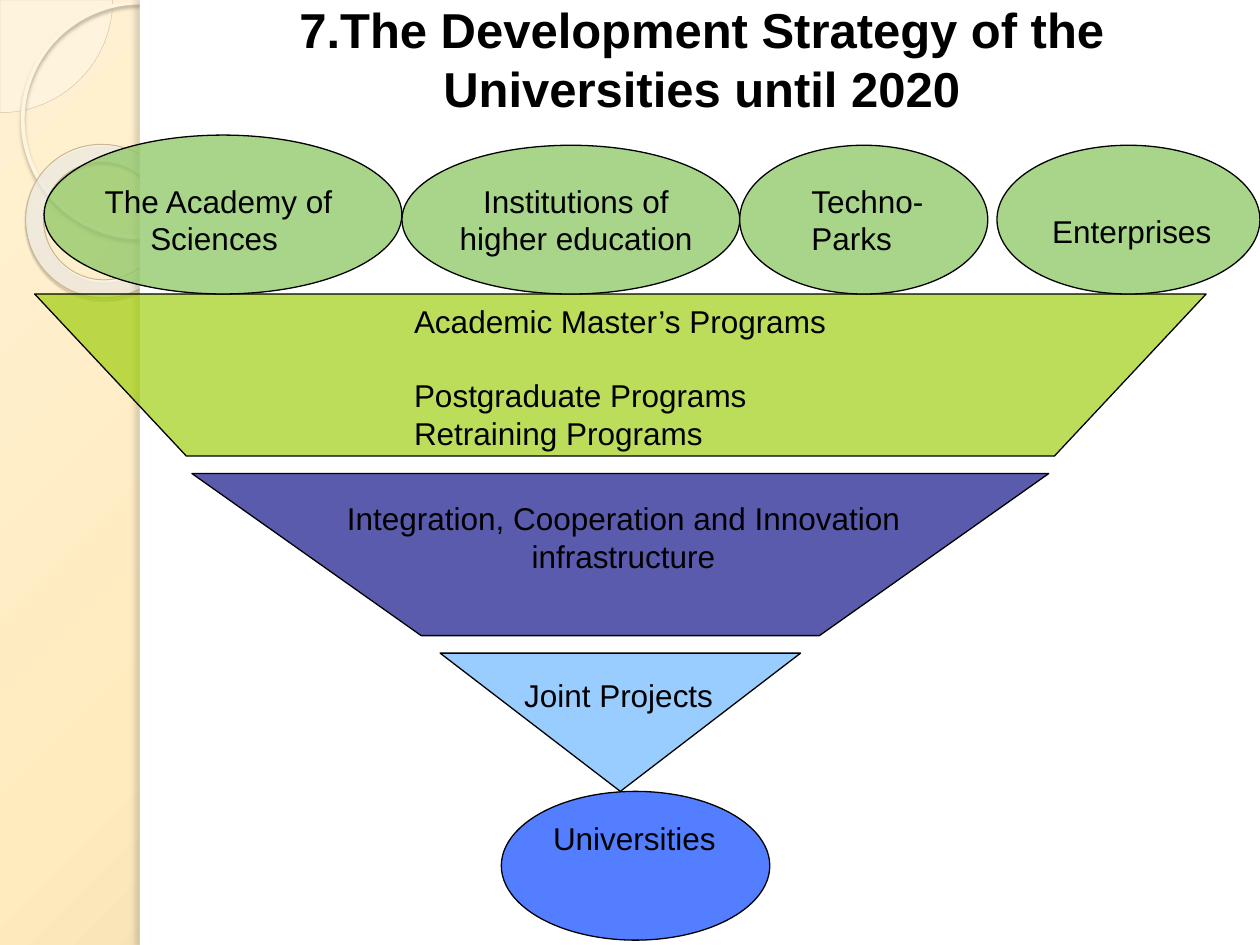
from pptx import Presentation
from pptx.dml.color import RGBColor
from pptx.enum.shapes import MSO_SHAPE as SHAPE
from pptx.enum.text import MSO_ANCHOR as ANCHOR, PP_ALIGN as ALIGN
from pptx.oxml import parse_xml
from pptx.oxml.ns import qn
from pptx.util import Pt

BLACK = RGBColor(0x00, 0x00, 0x00)
WHITE = RGBColor(0xFF, 0xFF, 0xFF)
GREEN = RGBColor(0x8D, 0xC7, 0x65)
LIME = RGBColor(0x99, 0xCC, 0x00)
INDIGO = RGBColor(0x33, 0x33, 0x99)
SKY = RGBColor(0x99, 0xCC, 0xFF)
BLUE = RGBColor(0x33, 0x66, 0xFF)
CREAM = RGBColor(0xFE, 0xFA, 0xF4)
PIE_EDGE = RGBColor(0xD3, 0xC3, 0x9F)
RING_EDGE = RGBColor(0xFF, 0xF5, 0xDE)
RING_SHADE = RGBColor(0xB0, 0xA6, 0x8F)
DONUT_EDGE = RGBColor(0xC7, 0xB8, 0x93)
DONUT_SHADE = RGBColor(0x5A, 0x54, 0x44)
PANEL_SHADE = RGBColor(0x73, 0x6F, 0x63)
PAPER = [(0, RGBColor(0xFF, 0xF1, 0xD3), 100), (40, RGBColor(0xFF, 0xEB, 0xBE), 100),
         (100, RGBColor(0xC9, 0xB4, 0x84), 100)]
PEARL = [(0, RGBColor(0xFF, 0xFC, 0xF6), 70), (70, RGBColor(0xFF, 0xFE, 0xFB), 55),
         (100, RGBColor(0xF0, 0xD2, 0x8E), 60)]
NS = 'xmlns:a="http://schemas.openxmlformats.org/drawingml/2006/main"'


def color_xml(color, alpha):
    """Return the XML of a colour with its opacity in percent."""
    return f'<a:srgbClr val="{color}"><a:alpha val="{alpha * 1000}"/></a:srgbClr>'


def set_gradient(fill, owner, stops, rect):
    """Give a fill a circular gradient that runs to the given rectangle."""
    fill.gradient()
    old = next(owner.iter(qn("a:gradFill")))
    gs = "".join(f'<a:gs pos="{pos * 1000}">{color_xml(c, a)}</a:gs>' for pos, c, a in stops)
    l, t, r, b = (v * 1000 for v in rect)
    old.getparent().replace(old, parse_xml(
        f'<a:gradFill {NS} rotWithShape="1"><a:gsLst>{gs}</a:gsLst><a:path path="circle">'
        f'<a:fillToRect l="{l}" t="{t}" r="{r}" b="{b}"/></a:path></a:gradFill>'))


def set_shadow(sp, color, alpha, blur, dist, angle):
    """Give a shape an outer shadow."""
    effects = sp._element.spPr.find(qn("a:effectLst"))
    effects.append(parse_xml(
        f'<a:outerShdw {NS} blurRad="{Pt(blur)}" dist="{Pt(dist)}" dir="{angle * 60000}" '
        f'algn="tl" rotWithShape="0">{color_xml(color, alpha)}</a:outerShdw>'))


def style(sp, fill=None, alpha=100, line=None, width=0.75):
    """Set the fill, opacity and outline of a shape and return it."""
    sp.shadow.inherit = False
    if fill is None:
        sp.fill.background()
    else:
        sp.fill.solid()
        sp.fill.fore_color.rgb = fill
        clr = sp._element.spPr.find(qn("a:solidFill"))[0]
        clr.append(parse_xml(f'<a:alpha {NS} val="{alpha * 1000}"/>'))
    if line is None:
        sp.line.fill.background()
    else:
        sp.line.color.rgb = line
        sp.line.width = Pt(width)
    return sp


def add_preset(slide, kind, x, y, w, h, **look):
    """Add a styled preset shape."""
    return style(slide.shapes.add_shape(kind, Pt(x), Pt(y), Pt(w), Pt(h)), **look)


def write(tf, lines, align=ALIGN.CENTER, size=18, bold=False, anchor=ANCHOR.TOP, wrap=True):
    """Fill a text frame with one paragraph for each line."""
    tf.word_wrap = wrap
    tf.vertical_anchor = anchor
    for i, text in enumerate(lines):
        p = tf.add_paragraph() if i else tf.paragraphs[0]
        p.alignment = align
        r = p.add_run()
        r.text = text
        r.font.name, r.font.size, r.font.bold = "Arial", Pt(size), bold
        r.font.color.rgb = BLACK


def add_label(slide, lines, x, y, w, h, **text):
    """Add a text box and return its text frame."""
    tf = slide.shapes.add_textbox(Pt(x), Pt(y), Pt(w), Pt(h)).text_frame
    write(tf, lines, **text)
    return tf


def add_backdrop(slide, x, y, w, h):
    """Draw the paper background, its ornaments and the white panel."""
    set_gradient(slide.background.fill, slide._element, PAPER, (-24, -20, 124, 120))
    pie = add_preset(slide, SHAPE.PIE, x - 64.4, y - 64.4, 128.8, 128.8,
                     fill=CREAM, alpha=33, line=PIE_EDGE, width=0.25)
    pie.adjustments[0], pie.adjustments[1] = 0, 54
    ring = add_preset(slide, SHAPE.OVAL, x + 13, y + 1.5, 134, 134, line=RING_EDGE, width=2.15)
    set_shadow(ring, RING_SHADE, 85, 2, 2, 90)
    donut = add_preset(slide, SHAPE.DONUT, x + 14.4, y + 82.8, 88.6, 87.1,
                       line=DONUT_EDGE, width=0.58)
    donut.adjustments[0] = 0.118
    donut.rotation = 38.6
    set_gradient(donut.fill, donut._element, PEARL, (-408, -50, 508, 150))
    set_shadow(donut, DONUT_SHADE, 35, 1, 1.2, 75)
    add_preset(slide, SHAPE.RECTANGLE, x + 80, y, w - 80, h, fill=WHITE)
    edge = add_preset(slide, SHAPE.RECTANGLE, x + 80, y, 5.8, h, fill=WHITE)
    set_shadow(edge, PANEL_SHADE, 25, 3, 3, 180)


def add_title(slide, x, y, w, h):
    """Place and format the title placeholder."""
    sp = slide.shapes.title
    sp.left, sp.top, sp.width, sp.height = Pt(x), Pt(y), Pt(w), Pt(h)
    write(sp.text_frame, ["7.The Development Strategy of the Universities until 2020"],
          size=28, bold=True, anchor=ANCHOR.MIDDLE)


def add_funnel(slide, x, y, w):
    """Draw the narrowing bands and the ellipse they lead to."""
    mid, gap, top = x + w / 2, 10, y
    bands = [(w / 2, 248, 92.6, LIME, 65), (244.8, 113.8, 92.6, INDIGO, 80),
             (103, 0, 79, SKY, 100)]
    for upper, lower, h, color, alpha in bands:
        fb = slide.shapes.build_freeform(Pt(mid - upper), Pt(top))
        fb.add_line_segments([(Pt(mid + upper), Pt(top)), (Pt(mid + lower), Pt(top + h)),
                              (Pt(mid - lower), Pt(top + h))])
        style(fb.convert_to_shape(), fill=color, alpha=alpha, line=BLACK)
        top += h + gap
    goal = add_preset(slide, SHAPE.OVAL, mid - 68, top - gap, 153.4, 85,
                      fill=BLUE, alpha=84, line=BLACK)
    write(goal.text_frame, ["Universities"], align=ALIGN.LEFT)
    tf = add_label(slide, ["Academic Master’s Programs", "Postgraduate Programs",
                           "Retraining Programs"],
                   mid - 125, y + 11.3, 254, 72, align=ALIGN.LEFT,
                   anchor=ANCHOR.MIDDLE, wrap=False)
    tf.paragraphs[0].space_after = Pt(21)
    add_label(slide, ["Integration, Cooperation and Innovation infrastructure"],
              mid - 171, y + 113.5, 345.6, 50.4)
    add_label(slide, ["Joint Projects"], mid - 62.2, y + 215, 122.4, 28.8, wrap=False)


def add_partners(slide, x, y, h):
    """Draw the row of partner ellipses, standing on one base line."""
    partners = [
        ("The Academy of Sciences ", 0, 204.5, h, (23, 23, 153.4, 50.4), ALIGN.CENTER),
        ("Institutions of higher education", 204.5, 193, 85, (17.3, 17.3, 164.2, 50.4),
         ALIGN.CENTER),
        ("Techno-Parks", 397.5, 141.8, 85, (33.9, 17.3, 83.5, 50.4), ALIGN.LEFT),
        ("Enterprises ", 544.5, 150.3, 85, (23, 34.6, 108, 28.8), ALIGN.CENTER),
    ]
    for name, dx, w, tall, (tx, ty, tw, th), align in partners:
        left, top = x + dx, y + h - tall
        add_preset(slide, SHAPE.OVAL, left, top, w, tall, fill=GREEN, alpha=75, line=BLACK)
        add_label(slide, [name], left + tx, top + ty, tw, th, align=align)


def main():
    """Build the slide and save it."""
    prs = Presentation()
    prs.slide_width, prs.slide_height = Pt(720), Pt(540)
    s = prs.slides.add_slide(prs.slide_layouts[5])
    add_backdrop(s, 0, 0, 720, 540)
    add_funnel(s, 19.8, 168, 669.4)
    add_partners(s, 25.2, 77.2, 90.8)
    add_title(s, 82, 5.8, 638, 54.7)
    title = s.shapes.title._element
    title.getparent().append(title)
    prs.save("out.pptx")


if __name__ == "__main__":
    main()
